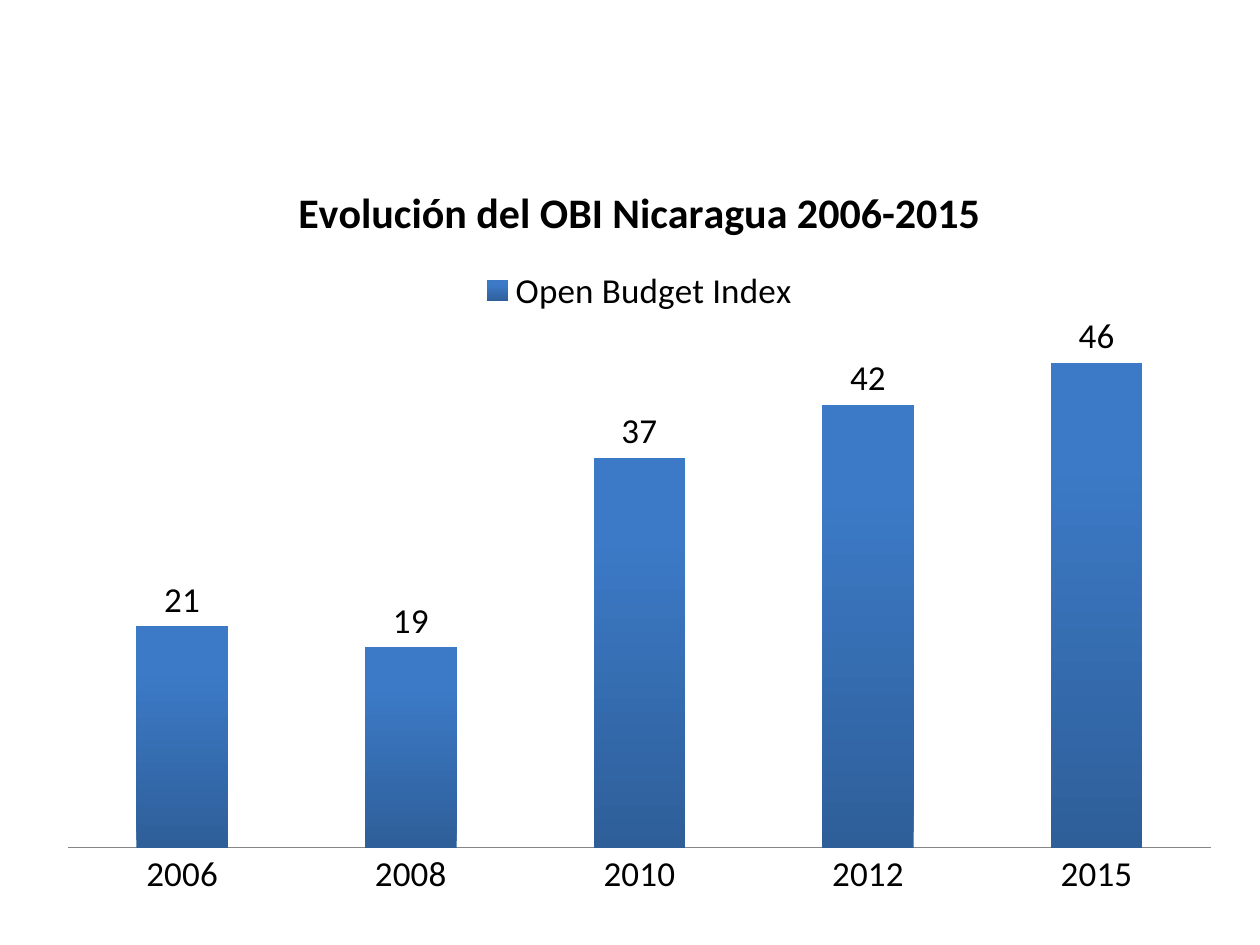
from dataclasses import dataclass

from lxml.etree import SubElement
from pptx import Presentation
from pptx.chart.data import CategoryChartData
from pptx.dml.color import RGBColor
from pptx.enum.chart import XL_CHART_TYPE as ChartType
from pptx.enum.chart import XL_LABEL_POSITION as LabelPosition
from pptx.enum.chart import XL_LEGEND_POSITION as LegendPosition
from pptx.enum.chart import XL_TICK_MARK as TickMark
from pptx.oxml.ns import qn
from pptx.util import Inches, Pt


@dataclass(frozen=True)
class Theme:
    font: str = "Calibri"
    text: RGBColor = RGBColor(0x00, 0x00, 0x00)
    axis: RGBColor = RGBColor(0x86, 0x86, 0x86)
    bar_bottom: RGBColor = RGBColor(0x2E, 0x5F, 0x99)
    bar_top: RGBColor = RGBColor(0x3C, 0x7A, 0xC7)
    title_size: int = 24
    body_size: int = 20


class SlideBuilder:
    def __init__(self, deck, theme):
        self.width, self.height = deck.slide_width, deck.slide_height
        self.theme = theme
        self.slide = deck.slides.add_slide(deck.slide_layouts[6])

    def style_font(self, font, size, bold=False):
        font.name = self.theme.font
        font.size = Pt(size)
        font.bold = bold
        font.color.rgb = self.theme.text

    def column_chart(self, box, title, series_name, scores, top_score, plot_box):
        """Draw one series of columns; box and plot_box are shares of their parent."""
        theme = self.theme
        index_data = CategoryChartData(number_format="0")
        index_data.categories = list(scores)
        index_data.add_series(series_name, list(scores.values()))
        x, y, w, h = box
        chart = self.slide.shapes.add_chart(
            ChartType.COLUMN_CLUSTERED,
            int(x * self.width), int(y * self.height),
            int(w * self.width), int(h * self.height), index_data).chart
        self.style_font(chart.font, theme.body_size)

        # Title and legend
        chart.has_title = True
        heading = chart.chart_title.text_frame
        heading.text = title
        self.style_font(heading.paragraphs[0].runs[0].font, theme.title_size, bold=True)
        chart.chart_title.include_in_layout = False
        chart.has_legend = True
        chart.legend.position = LegendPosition.TOP
        chart.legend.include_in_layout = False

        # Axes
        years, values = chart.category_axis, chart.value_axis
        years.major_tick_mark = TickMark.NONE
        years.format.line.color.rgb = theme.axis
        years.format.line.width = Pt(0.75)
        values.minimum_scale, values.maximum_scale = 0, top_score
        values.has_major_gridlines = False
        values.visible = False

        # Columns and their labels
        plot = chart.plots[0]
        plot.vary_by_categories = False
        plot.gap_width, plot.overlap = 150, -25
        self.shade(plot.series[0].format.fill)
        plot.has_data_labels = True
        labels = plot.data_labels
        labels.show_value = True
        labels.number_format, labels.number_format_is_linked = "0", False
        labels.position = LabelPosition.OUTSIDE_END
        self.style_font(labels.font, theme.body_size)
        self.place_plot(chart, plot_box)

    def shade(self, fill):
        fill.gradient()
        fill.gradient_angle = 90
        bottom, top = fill.gradient_stops
        bottom.color.rgb, bottom.position = self.theme.bar_bottom, 0
        top.color.rgb, top.position = self.theme.bar_top, 0.8

    @staticmethod
    def place_plot(chart, plot_box):
        area = chart.element.find(".//" + qn("c:plotArea"))
        for automatic in area.findall(qn("c:layout")):
            area.remove(automatic)
        layout = SubElement(area, qn("c:layout"))
        area.insert(0, layout)
        manual = SubElement(layout, qn("c:manualLayout"))
        settings = [("layoutTarget", "inner"), ("xMode", "edge"), ("yMode", "edge")]
        settings += zip("xywh", plot_box)
        for tag, value in settings:
            SubElement(manual, qn("c:" + tag)).set("val", str(value))


def main():
    deck = Presentation()
    deck.slide_width, deck.slide_height = Inches(10), Inches(7.5)
    builder = SlideBuilder(deck, Theme())

    # Open Budget Index by survey year
    builder.column_chart(
        box=(0.035, 0.164, 0.945, 0.797),
        title="Evolución del OBI Nicaragua 2006-2015",
        series_name="Open Budget Index",
        scores={"2006": 21, "2008": 19, "2010": 37, "2012": 42, "2015": 46},
        top_score=50,
        plot_box=(0.02, 0.22, 0.96, 0.7))

    deck.save("out.pptx")


if __name__ == "__main__":
    main()
